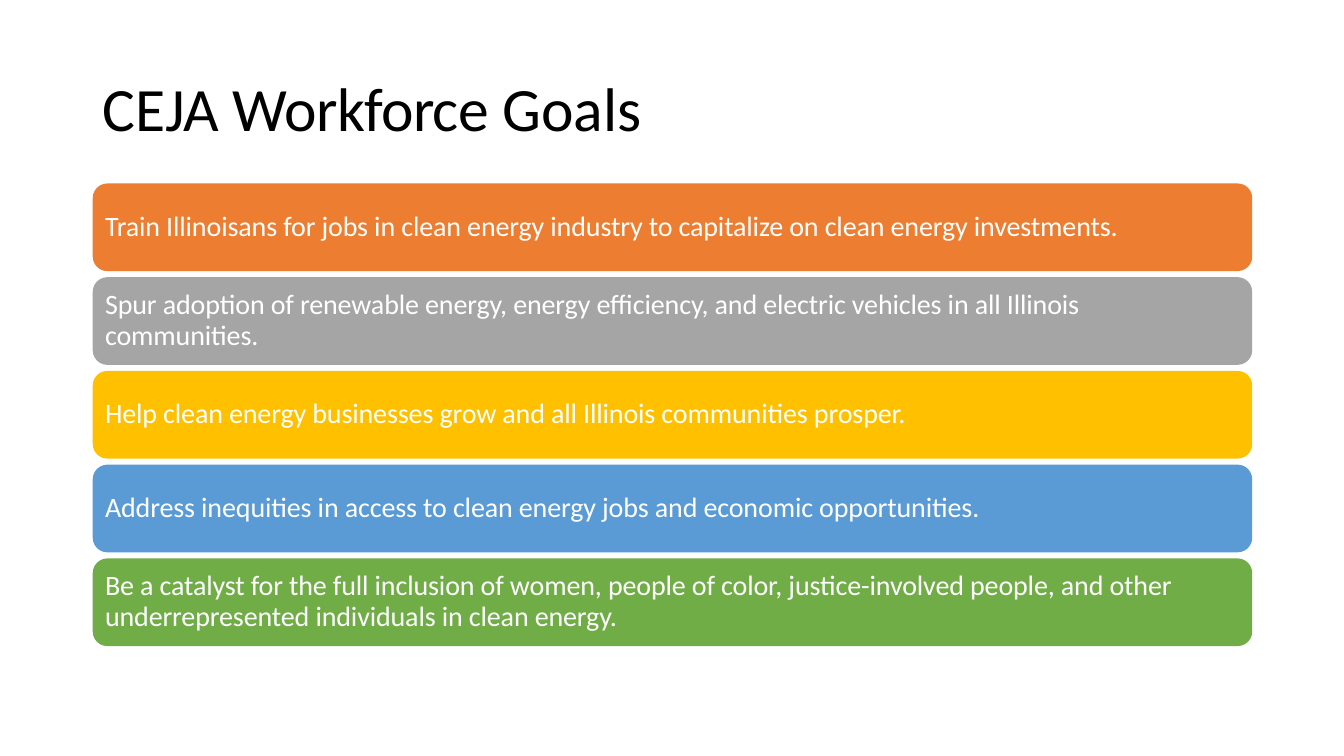
from dataclasses import dataclass

from pptx import Presentation
from pptx.dml.color import RGBColor
from pptx.enum.shapes import MSO_SHAPE as SHAPE
from pptx.enum.text import MSO_ANCHOR as ANCHOR, PP_ALIGN as ALIGN
from pptx.util import Inches, Pt


@dataclass(frozen=True)
class Theme:
    font: str = "Calibri"
    title_size: int = 44
    goal_size: int = 20
    goal_leading: int = 22
    title_color: str = "000000"
    goal_color: str = "FFFFFF"
    bars: tuple = ("ED7D31", "A5A5A5", "FFC000", "5B9BD5", "70AD47")


class Deck:
    def __init__(self, theme):
        self.theme = theme
        self.prs = Presentation()
        self.prs.slide_width = Inches(13.33)
        self.prs.slide_height = Inches(7.5)
        self.slide = self.prs.slides.add_slide(self.prs.slide_layouts[5])

    def set_frame(self, tf, left, top, right, bottom, anchor):
        tf.word_wrap = True
        tf.vertical_anchor = anchor
        tf.margin_left, tf.margin_top = Inches(left), Inches(top)
        tf.margin_right, tf.margin_bottom = Inches(right), Inches(bottom)

    def add_run(self, p, text, size, color, tracking):
        r = p.add_run()
        r.text = text
        r.font.name = self.theme.font
        r.font.size = Pt(size)
        r.font.color.rgb = RGBColor.from_string(color)
        r.font._element.set("spc", str(round(tracking * 100)))

    def add_title(self, runs, left, top, width, height):
        sp = self.slide.shapes.title
        sp.left, sp.top = Inches(left), Inches(top)
        sp.width, sp.height = Inches(width), Inches(height)
        tf = sp.text_frame
        self.set_frame(tf, 0.02, 0.02, 0, 0, ANCHOR.TOP)
        p = tf.paragraphs[0]
        p.alignment = ALIGN.LEFT
        for text, tracking in runs:
            self.add_run(p, text, self.theme.title_size, self.theme.title_color, tracking)

    def add_bar(self, text, fill, left, top, width, height):
        sp = self.slide.shapes.add_shape(
            SHAPE.ROUNDED_RECTANGLE, Inches(left), Inches(top), Inches(width), Inches(height)
        )
        sp.shadow.inherit = False
        sp.fill.solid()
        sp.fill.fore_color.rgb = RGBColor.from_string(fill)
        sp.line.fill.background()
        tf = sp.text_frame
        self.set_frame(tf, 0.08, 0, 0.5, 0.02, ANCHOR.MIDDLE)
        p = tf.paragraphs[0]
        p.alignment = ALIGN.LEFT
        p.line_spacing = Pt(self.theme.goal_leading)
        self.add_run(p, text, self.theme.goal_size, self.theme.goal_color, -0.1)

    def save(self):
        self.prs.save("out.pptx")


TITLE = [("CEJA ", -0.2), ("Workforce ", -0.5), ("Goals", 0)]
GOALS = [
    "Train Illinoisans for jobs in clean energy industry to capitalize on clean energy investments.",
    "Spur adoption of renewable energy, energy efficiency, and electric vehicles in all Illinois communities.",
    "Help clean energy businesses grow and all Illinois communities prosper.",
    "Address inequities in access to clean energy jobs and economic opportunities.",
    "Be a catalyst for the full inclusion of women, people of color, justice-involved people, "
    "and other underrepresented individuals in clean energy.",
]
BAR_LEFT, BAR_TOP, BAR_WIDTH, BAR_HEIGHT, BAR_PITCH = 0.92, 1.82, 11.5, 0.87, 0.93


def main():
    theme = Theme()
    deck = Deck(theme)
    deck.add_title(TITLE, 1, 0.67, 5.5, 0.76)
    for i, (goal, fill) in enumerate(zip(GOALS, theme.bars)):
        deck.add_bar(goal, fill, BAR_LEFT, BAR_TOP + i * BAR_PITCH, BAR_WIDTH, BAR_HEIGHT)
    deck.save()


if __name__ == "__main__":
    main()
